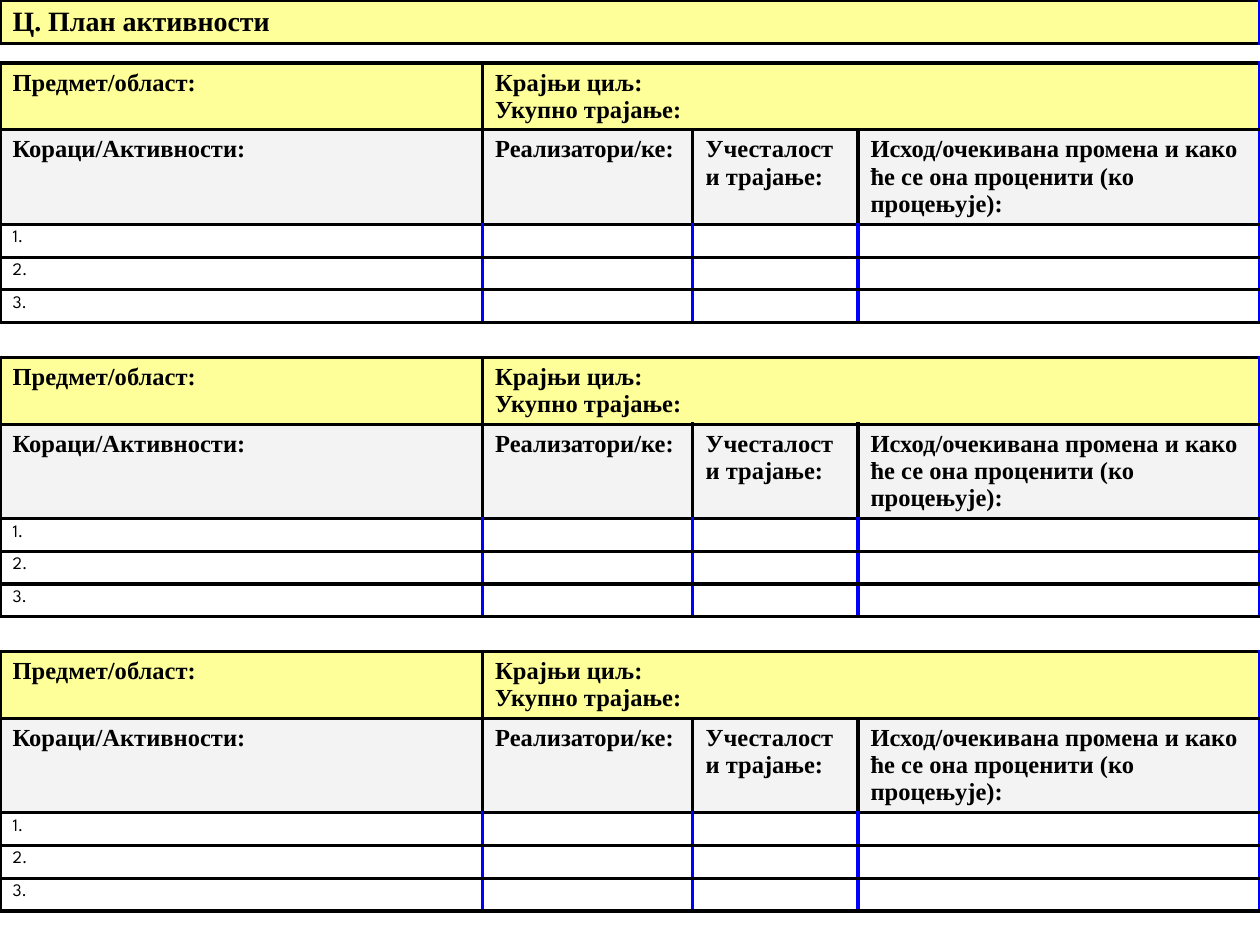
"""Build the activity plan slide: a title bar above three identical planning tables."""
from lxml.etree import SubElement
from pptx import Presentation
from pptx.dml.color import RGBColor as Color
from pptx.oxml.ns import qn
from pptx.text.text import Font
from pptx.util import Inches, Pt

BLACK = RGB_TEXT = Color(0x00, 0x00, 0x00)
BLUE = Color(0x00, 0x00, 0xFF)
YELLOW = Color(0xFF, 0xFF, 0x99)
GREY = Color(0xF3, 0xF3, 0xF3)

TITLE = [["Ц. План активности"]]
PLAN = [
    ["Предмет/област:", "Крајњи циљ:\nУкупно трајање:", "", ""],
    ["Кораци/Активности:", "Реализатори/ке:", "Учесталост и трајање:",
     "Исход/очекивана промена и како ће се она проценити (ко процењује):"],
    ["1.", "", "", ""],
    ["2.", "", "", ""],
    ["3.", "", "", ""],
]

SLIDE_SIZE = (10, 7.5)
TITLE_ROWS = [0.34]
PLAN_COLUMNS = [3.83, 1.67, 1.31, 3.19]
PLAN_ROWS = [0.52, 0.75, 0.26, 0.26, 0.26]
PLAN_COUNT, FIRST_TOP, PLAN_STEP = 3, 0.5, 2.335
BORDER_WIDTH = Pt(2)

TITLE_FONT = {"name": "Times New Roman", "size": Pt(16), "bold": True}
HEADER_FONT = {**TITLE_FONT, "size": Pt(14)}
STEP_FONT = {"name": "League Spartan", "size": Pt(10), "bold": False}
TITLE_STYLES = [(TITLE_FONT, YELLOW)]
PLAN_STYLES = [(HEADER_FONT, YELLOW), (HEADER_FONT, GREY)] + [(STEP_FONT, None)] * 3


def apply_format(font, values):
    for name, value in values.items():
        setattr(font, name, value)
    font.color.rgb = RGB_TEXT


def draw_borders(cell, colors):
    properties = cell._tc.get_or_add_tcPr()
    for side, color in colors.items():
        line = SubElement(properties, qn(f"a:ln{side}"), w=str(BORDER_WIDTH))
        fill = SubElement(line, qn("a:solidFill"))
        SubElement(fill, qn("a:srgbClr"), val=str(color))


def write_text(cell, text, values):
    cell.text = text
    for para in cell.text_frame.paragraphs:
        for span in para.runs:
            apply_format(span.font, values)
        if not para.runs:
            apply_format(Font(para._p.get_or_add_endParaRPr()), values)


def add_grid(page, top, content, columns, rows, styles, merges=()):
    table = page.shapes.add_table(
        len(rows), len(columns), 0, Inches(top),
        Inches(sum(columns)), Inches(sum(rows))).table
    table.first_row = table.horz_banding = False
    for column, width in zip(table.columns, columns):
        column.width = Inches(width)
    for row, height in zip(table.rows, rows):
        row.height = Inches(height)
    for start, end in merges:
        table.cell(*start).merge(table.cell(*end))

    for r, (texts, (values, fill)) in enumerate(zip(content, styles)):
        for c, text in enumerate(texts):
            cell = table.cell(r, c)
            if cell.is_spanned:
                continue
            write_text(cell, text, values)
            at_right_edge = c + cell.span_width >= len(columns)
            draw_borders(cell, {
                "L": BLACK if c == 0 or fill else BLUE,
                "R": BLUE if at_right_edge or not fill else BLACK,
                "T": BLACK,
                "B": BLACK,
            })
            if fill:
                cell.fill.solid()
                cell.fill.fore_color.rgb = fill
            else:
                cell.fill.background()


def main():
    deck = Presentation()
    deck.slide_width, deck.slide_height = map(Inches, SLIDE_SIZE)
    page = deck.slides.add_slide(deck.slide_layouts[6])
    add_grid(page, 0, TITLE, [SLIDE_SIZE[0]], TITLE_ROWS, TITLE_STYLES)
    for index in range(PLAN_COUNT):
        add_grid(page, FIRST_TOP + index * PLAN_STEP, PLAN, PLAN_COLUMNS,
                 PLAN_ROWS, PLAN_STYLES, merges=[((0, 1), (0, 3))])
    deck.save("out.pptx")


if __name__ == "__main__":
    main()
